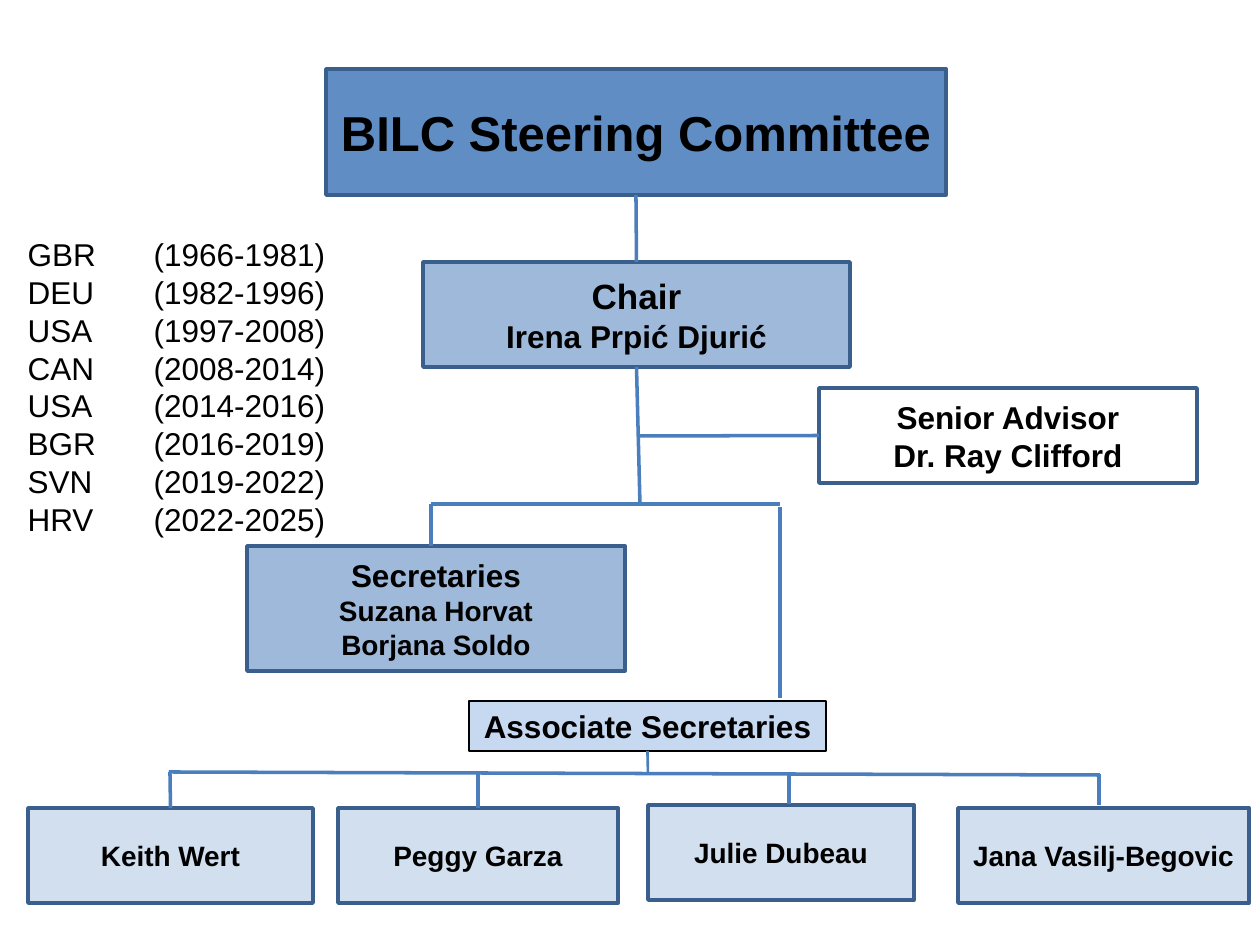
"""Build the steering committee organisation chart."""
from lxml import etree
from pptx import Presentation
from pptx.dml.color import RGBColor
from pptx.enum.shapes import MSO_CONNECTOR, MSO_SHAPE
from pptx.enum.text import MSO_ANCHOR, MSO_AUTO_SIZE, PP_ALIGN
from pptx.oxml.ns import qn
from pptx.util import Emu, Pt

STRAIGHT = MSO_CONNECTOR.STRAIGHT
PROCESS, RECT = MSO_SHAPE.FLOWCHART_PROCESS, MSO_SHAPE.RECTANGLE
MIDDLE = MSO_ANCHOR.MIDDLE
NO_FIT = MSO_AUTO_SIZE.NONE
LEFT, CENTER = PP_ALIGN.LEFT, PP_ALIGN.CENTER
TOP_SIDE, LEFT_SIDE, BOTTOM_SIDE = 0, 1, 2

PX_PER_INCH = 126
FONT = "Arial"
COLORS = {
    "text": "000000",
    "box": "4F81BD",
    "border": "3A5F8C",
    "link": "4B7EBC",
    "label": "C6D9F1",
}
TERMS = [
    ("GBR", "1966-1981"), ("DEU", "1982-1996"), ("USA", "1997-2008"),
    ("CAN", "2008-2014"), ("USA", "2014-2016"), ("BGR", "2016-2019"),
    ("SVN", "2019-2022"), ("HRV", "2022-2025"),
]
ASSOCIATES = [
    ("Keith Wert", (28, 808, 285, 95), (170, 772, 804), True),
    ("Peggy Garza", (338, 808, 280, 95), (478, 774, 806), True),
    ("Julie Dubeau", (648, 805, 266, 95), (789, 773, 804), False),
    ("Jana Vasilj-Begovic", (958, 808, 291, 95), (1099, 774, 805), False),
]


def px(n):
    """Turn pixels into EMU."""
    return Emu(round(n * 914400 / PX_PER_INCH))


def rgb(name):
    """Look up a named colour."""
    return RGBColor.from_string(COLORS[name])


def place(sp, box):
    """Move and size a shape."""
    sp.left, sp.top, sp.width, sp.height = map(px, box)


def write(tf, text, size=18, bold=True, align=CENTER, tab=None):
    """Write one paragraph, filling the first one if it is empty."""
    p = tf.paragraphs[0] if not tf.text else tf.add_paragraph()
    if tab:
        pPr = p._p.get_or_add_pPr()
        pPr.set("marL", "0")
        pPr.set("indent", "0")
        etree.SubElement(pPr, qn("a:buNone"))
        tabs = etree.SubElement(pPr, qn("a:tabLst"))
        etree.SubElement(tabs, qn("a:tab"), pos=str(px(tab)), algn="l")
    p.alignment = align
    p.space_before = Pt(0)
    r = p.add_run()
    r.text = text
    r.font.name, r.font.size, r.font.bold = FONT, Pt(size), bold
    r.font.color.rgb = rgb("text")


def paint(sp, fill="box", alpha=100, line="border", width=2):
    """Set the fill, its opacity in percent, and the outline."""
    if alpha:
        sp.fill.solid()
        sp.fill.fore_color.rgb = rgb(fill)
        if alpha < 100:
            clr = sp._element.spPr.find(".//" + qn("a:srgbClr"))
            etree.SubElement(clr, qn("a:alpha"), val=str(alpha * 1000))
    else:
        sp.fill.background()
    sp.line.color.rgb = rgb(line)
    sp.line.width = Pt(width)


def add_box(s, box, lines, shape=PROCESS, **look):
    """Add a box with centred lines of (text, size)."""
    sp = s.shapes.add_shape(shape, *map(px, box))
    sp.shadow.inherit = False
    paint(sp, **look)
    tf = sp.text_frame
    tf.word_wrap = False
    tf.vertical_anchor = MIDDLE
    for text, size in lines:
        write(tf, text, size=size)
    return sp


def add_link(s, start, end, begin=None, finish=None, width=2):
    """Add a straight connector, joined to (shape, side) where given."""
    c = s.shapes.add_connector(STRAIGHT, *map(px, start + end))
    if begin:
        c.begin_connect(*begin)
    if finish:
        c.end_connect(*finish)
    c.line.color.rgb = rgb("link")
    c.line.width = Pt(width)
    etree.SubElement(c._element.spPr, qn("a:effectLst"))


def add_title(s):
    """Turn the title placeholder into the top box."""
    sp = s.shapes.title
    place(sp, (326, 69, 620, 126))
    paint(sp, alpha=90)
    tf = sp.text_frame
    tf.auto_size, tf.word_wrap, tf.vertical_anchor = NO_FIT, False, MIDDLE
    write(tf, "BILC Steering Committee", size=28)
    return sp


def add_terms(s):
    """List the chairing nations in the body placeholder."""
    sp = s.placeholders[1]
    place(sp, (15, 229, 416, 318))
    tf = sp.text_frame
    tf.auto_size = NO_FIT
    for nation, years in TERMS:
        write(tf, f"{nation}\t({years})", bold=False, align=LEFT, tab=126)


def add_associates(s):
    """Add the bottom row of boxes with its bar and drops."""
    add_link(s, (169, 772), (1100, 775))
    for name, box, (x, top, bottom), joined in ASSOCIATES:
        sp = add_box(s, box, [(name, 16)], alpha=25)
        finish = (sp, TOP_SIDE) if joined else None
        add_link(s, (x, top), (x, bottom), finish=finish)


def main():
    """Build and save the slide."""
    prs = Presentation()
    prs.slide_width, prs.slide_height = px(1260), px(945)
    s = prs.slides.add_slide(prs.slide_layouts[1])
    title = add_title(s)
    add_terms(s)
    chair = add_box(s, (423, 262, 427, 105),
                    [("Chair", 20), ("Irena Prpić Djurić", 18)], alpha=55)
    advisor = add_box(s, (819, 388, 378, 95),
                      [("Senior Advisor", 18), ("Dr. Ray Clifford", 18)],
                      alpha=0)
    add_box(s, (247, 546, 378, 125),
            [("Secretaries", 18), ("Suzana Horvat", 16),
             ("Borjana Soldo", 16)], alpha=55)
    label = add_box(s, (469, 701, 357, 50), [("Associate Secretaries", 18)],
                    shape=RECT, fill="label", line="text", width=0.75)
    add_link(s, (636, 195), (637, 262),
             begin=(title, BOTTOM_SIDE), finish=(chair, TOP_SIDE))
    add_link(s, (819, 436), (638, 436), begin=(advisor, LEFT_SIDE))
    add_link(s, (637, 367), (640, 504), begin=(chair, BOTTOM_SIDE))
    add_link(s, (431, 504), (780, 504))
    add_link(s, (431, 504), (431, 546))
    add_link(s, (780, 507), (780, 698))
    add_associates(s)
    add_link(s, (648, 751), (648, 773), begin=(label, BOTTOM_SIDE), width=1.5)
    prs.save("out.pptx")


if __name__ == "__main__":
    main()
